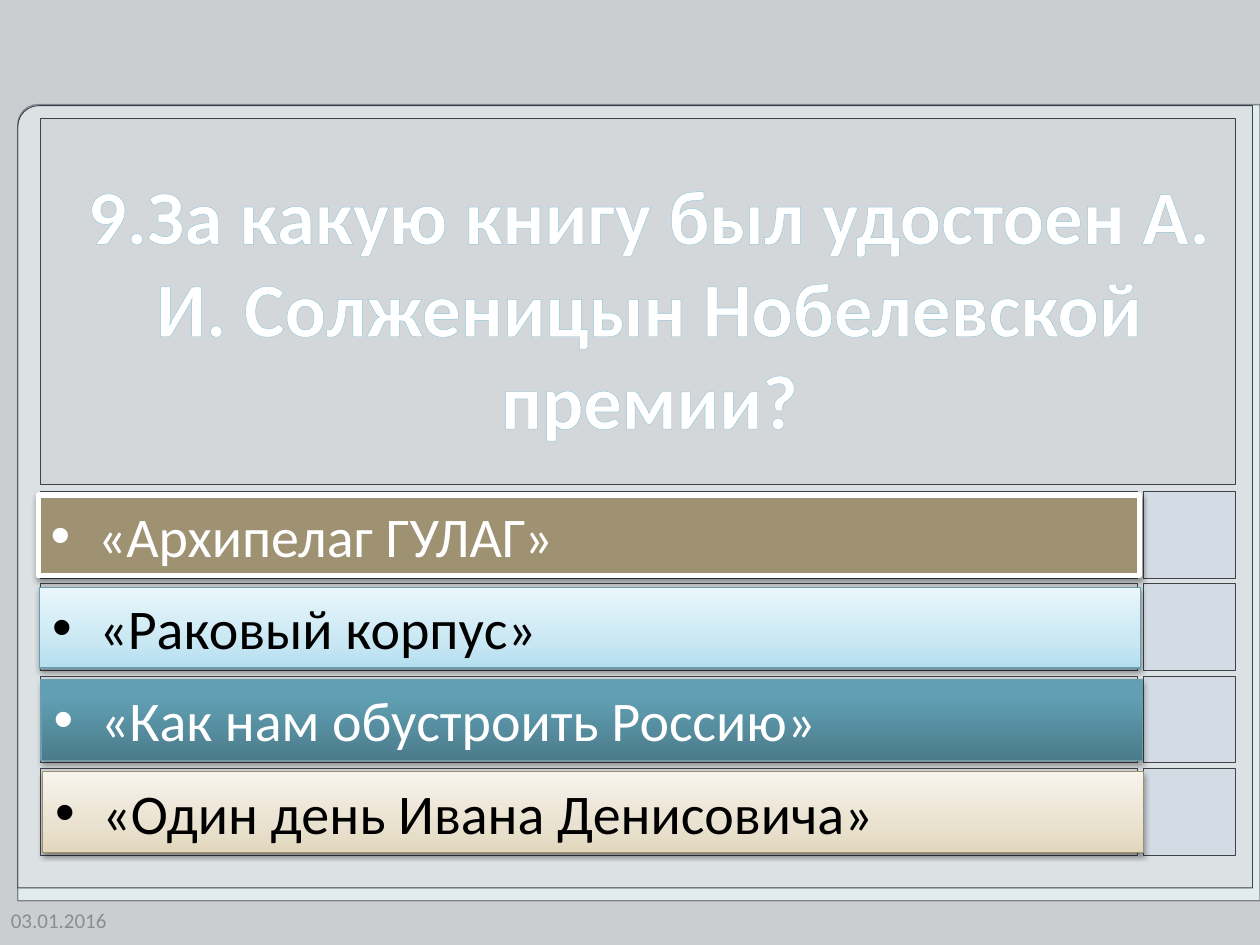
from dataclasses import dataclass
from typing import Optional

import lxml.etree
import pptx
import pptx.dml.color
import pptx.enum.shapes
import pptx.enum.text
import pptx.oxml.ns
import pptx.util

Cm, Pt, qn = pptx.util.Cm, pptx.util.Pt, pptx.oxml.ns.qn
PRESET = pptx.enum.shapes.MSO_SHAPE
ANCHOR = pptx.enum.text.MSO_ANCHOR
ALIGN = pptx.enum.text.PP_ALIGN
ROW_STEP = 1.86


@dataclass
class Box:
    left: float
    top: float
    width: float
    height: float


@dataclass
class Panel:
    box: Box
    fill: str
    line: str
    weight: float = 0.5
    opacity: int = 100
    corner: Optional[float] = None


@dataclass
class Answer:
    text: str
    text_color: str
    stops: list
    line: str
    weight: float = 0.75
    shadow_opacity: int = 38
    shadow_distance: float = 1.6


def rgb(value: str):
    return pptx.dml.color.RGBColor.from_string(value)


def add_child(parent, tag: str, **attributes):
    child = lxml.etree.SubElement(parent, qn(tag))
    for key, value in attributes.items():
        child.set(key, str(value))
    return child


def place(box: Box):
    return [Cm(n) for n in (box.left, box.top, box.width, box.height)]


def draw_panel(slide, panel: Panel):
    preset = PRESET.RECTANGLE if panel.corner is None else PRESET.ROUND_1_RECTANGLE
    shape = slide.shapes.add_shape(preset, *place(panel.box))
    shape.shadow.inherit = False
    if panel.corner is not None:
        shape.adjustments[0] = panel.corner
        shape.element.spPr.find(qn("a:xfrm")).set("flipH", "1")
    shape.fill.solid()
    shape.fill.fore_color.rgb = rgb(panel.fill)
    if panel.opacity < 100:
        color = shape.element.spPr.find(qn("a:solidFill")).find(qn("a:srgbClr"))
        add_child(color, "a:alpha", val=panel.opacity * 1000)
    shape.line.color.rgb = rgb(panel.line)
    shape.line.width = Pt(panel.weight)
    return shape


def write(shape, text: str, *, size: float, color: str, bold=False, align=ALIGN.LEFT,
          anchor=ANCHOR.TOP, bullet="", outline="", outline_width=0.0):
    frame = shape.text_frame
    frame.word_wrap = True
    frame.vertical_anchor = anchor
    paragraph = frame.paragraphs[0]
    paragraph.alignment = align
    if bullet:
        properties = paragraph._p.get_or_add_pPr()
        properties.set("marL", str(Cm(0.95)))
        properties.set("indent", str(-Cm(0.95)))
        add_child(properties, "a:buFont", typeface="Arial")
        add_child(properties, "a:buChar", char=bullet)
    run = paragraph.add_run()
    run.text = text
    run.font.name = "Calibri"
    run.font.size = Pt(size)
    run.font.bold = bold
    run.font.color.rgb = rgb(color)
    if outline:
        border = lxml.etree.Element(qn("a:ln"), w=str(Pt(outline_width)))
        add_child(add_child(border, "a:solidFill"), "a:srgbClr", val=outline)
        run._r.get_or_add_rPr().insert(0, border)


def draw_answer(slide, answer: Answer, row: int):
    box = Box(0.77 + 0.03 * row, 9.98 + ROW_STEP * row, 22.2, 1.63)
    bar = draw_panel(slide, Panel(box, answer.stops[0][1], answer.line, answer.weight))
    properties = bar.element.spPr
    if len(answer.stops) > 1:
        bar.fill.gradient()
        bar.fill.gradient_angle = 90
        stop_list = properties.find(qn("a:gradFill")).find(qn("a:gsLst"))
        for stop in list(stop_list):
            stop_list.remove(stop)
        for position, color in answer.stops:
            add_child(add_child(stop_list, "a:gs", pos=position * 1000), "a:srgbClr", val=color)
    shadow = add_child(properties.find(qn("a:effectLst")), "a:outerShdw", blurRad=Pt(3.1),
                       dist=Pt(answer.shadow_distance), dir=5400000, rotWithShape=0)
    shade = add_child(shadow, "a:srgbClr", val="000000")
    add_child(shade, "a:alpha", val=answer.shadow_opacity * 1000)
    write(bar, answer.text, size=32, color=answer.text_color, bullet="•")


BACKDROP = [
    Panel(Box(0.36, 2.11, 25.04, 16.05), "E2ECEF", "7E848D", 0.75, corner=0.025),
    Panel(Box(0.36, 2.13, 24.89, 15.77), "D8D8D8", "3F4247", opacity=50, corner=0.027),
    Panel(Box(0.81, 2.39, 24.1, 7.37), "CBCED1", "3F4247", opacity=50),
]

ANSWERS = [
    Answer("«Архипелаг ГУЛАГ»", "FFFFFF", [(0, "9E9273")], "FFFFFF", weight=3),
    Answer("«Раковый корпус»", "000000",
           [(0, "B4DFF0"), (35, "CAE8F4"), (100, "EAF6FB")], "6A9DAE"),
    Answer("«Как нам обустроить Россию»", "FFFFFF",
           [(0, "4B7B8B"), (80, "61A0B4"), (100, "60A2B7")], "6A9DAE",
           shadow_opacity=35, shadow_distance=1.8),
    Answer("«Один день Ивана Денисовича»", "000000",
           [(0, "E2D7BD"), (35, "EAE2D0"), (100, "F7F4ED")], "9C8F6F"),
]


def main():
    """Build the quiz slide with one question and four answers."""
    deck = pptx.Presentation()
    deck.slide_width, deck.slide_height = Cm(25.4), Cm(19.05)
    slide = deck.slides.add_slide(deck.slide_layouts[6])
    slide.background.fill.solid()
    slide.background.fill.fore_color.rgb = rgb("CBCED1")

    for panel in BACKDROP:
        draw_panel(slide, panel)
    for row in range(len(ANSWERS)):
        top = 9.91 + ROW_STEP * row
        draw_panel(slide, Panel(Box(0.81, top, 22.12, 1.75), "CBCED1", "3F4247", opacity=50))
        draw_panel(slide, Panel(Box(23.06, top, 1.85, 1.75), "CCD8E7", "3F4247", opacity=50))

    date = slide.shapes.add_textbox(*place(Box(-0.03, 18.03, 2.97, 1.02)))
    write(date, "03.01.2016", size=12, color="8C8C8C", anchor=ANCHOR.MIDDLE)
    for row, answer in enumerate(ANSWERS):
        draw_answer(slide, answer, row)
    question = slide.shapes.add_textbox(*place(Box(0.79, 3.25, 24.61, 5.89)))
    write(question, "9.За какую книгу был удостоен А. И. Солженицын Нобелевской премии?",
          size=44, color="FFFFFF", bold=True, align=ALIGN.CENTER,
          outline="93C5D8", outline_width=2.48)
    deck.save("out.pptx")


if __name__ == "__main__":
    main()
